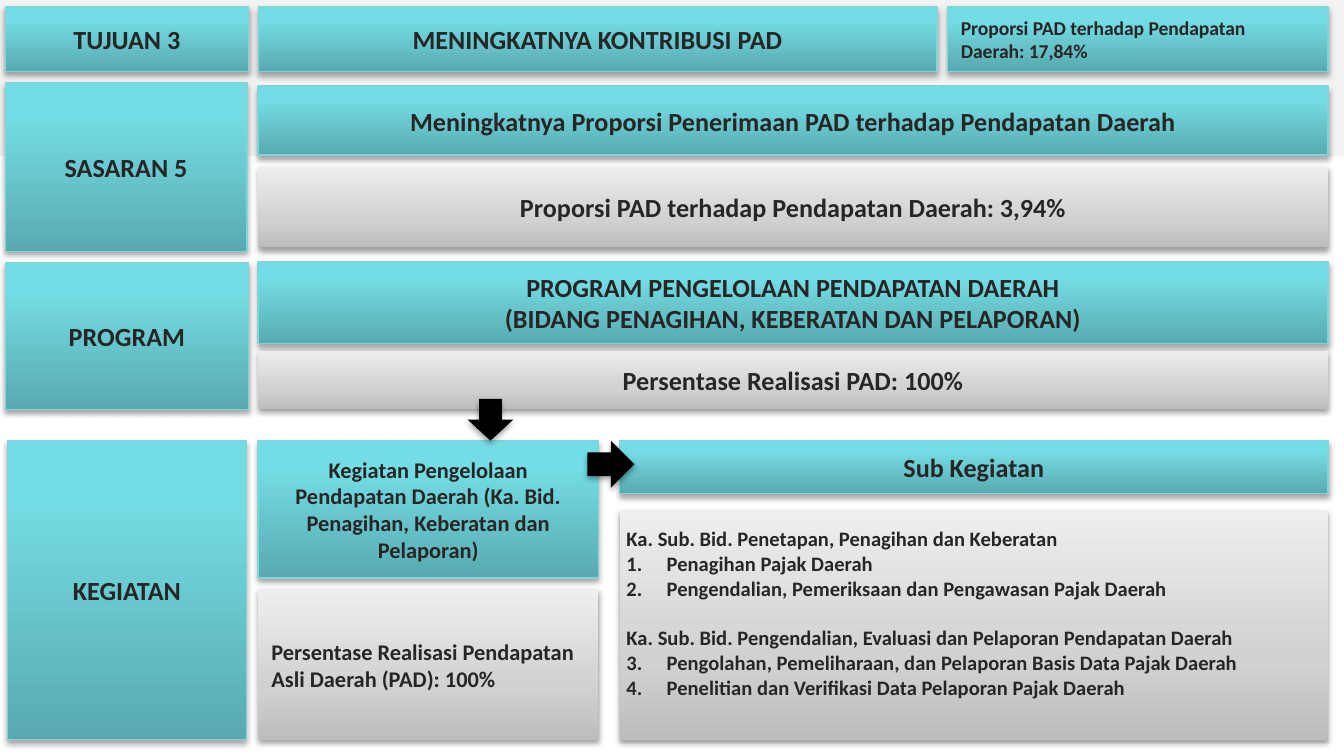
import copy

import pptx
import pptx.dml.color
import pptx.enum.shapes
import pptx.enum.text
import pptx.oxml.ns
import pptx.oxml.xmlchemy
import pptx.util
from lxml import etree

Cm = pptx.util.Cm
Pt = pptx.util.Pt
qn = pptx.oxml.ns.qn
SHAPE = pptx.enum.shapes.MSO_SHAPE
ALIGN = pptx.enum.text.PP_ALIGN

COLORS = {"text": "262626", "band": "F2F2F2", "edge": "80D5DB",
          "arrow": "000000", "shadow": "000000"}
GRADIENTS = {
    "teal": [(0, "59AAB0"), (0.8, "74DCE4"), (1, "72DFE7")],
    "gray": [(0, "BDBDBD"), (0.35, "D1D1D1"), (1, "EEEEEE")],
}
SHADOWS = {"teal": (35, 1.8), "gray": (38, 1.6)}
FRAME = {"word_wrap": True,
         "auto_size": pptx.enum.text.MSO_AUTO_SIZE.NONE,
         "vertical_anchor": pptx.enum.text.MSO_ANCHOR.MIDDLE}
LIST_MARGINS = {"margin_left": Cm(0.13), "margin_right": Cm(0.13),
                "margin_top": Cm(0.13), "margin_bottom": Cm(0.6)}
SPACING = {"space_before": Pt(0), "space_after": Pt(0), "line_spacing": 1.0}

RIGHT = 25.1
LABEL_X, MAIN_X, SUB_X = 0.1, 4.88, 11.71
MAIN_W, SUB_W, ACTIVITY_W = RIGHT - MAIN_X, RIGHT - SUB_X, 6.43
GOAL_Y, GOAL_H = 0.13, 1.22
ACTIVITY_Y = 8.33

BOXES = [
    ("teal", 17.91, GOAL_Y, RIGHT - 17.91, GOAL_H, 10.5, ALIGN.LEFT,
     ["Proporsi PAD terhadap Pendapatan", "Daerah: 17,84%"]),
    ("teal", LABEL_X, GOAL_Y, 4.6, GOAL_H, 14, ALIGN.CENTER, ["TUJUAN 3"]),
    ("teal", LABEL_X, 1.57, 4.57, 3.18, 14, ALIGN.CENTER, ["SASARAN 5"]),
    ("teal", MAIN_X, 1.63, MAIN_W, 1.3, 14, ALIGN.CENTER,
     ["Meningkatnya Proporsi Penerimaan PAD terhadap Pendapatan Daerah"]),
    ("gray", MAIN_X, 3.15, MAIN_W, 1.53, 14, ALIGN.CENTER,
     ["Proporsi PAD terhadap Pendapatan Daerah: 3,94%"]),
    ("teal", LABEL_X, 4.97, 4.6, 2.77, 14, ALIGN.CENTER, ["PROGRAM"]),
    ("teal", MAIN_X, 4.95, MAIN_W, 1.55, 14, ALIGN.CENTER,
     ["PROGRAM PENGELOLAAN PENDAPATAN DAERAH",
      "(BIDANG PENAGIHAN, KEBERATAN DAN PELAPORAN)"]),
    ("gray", MAIN_X, 6.63, MAIN_W, 1.1, 14, ALIGN.CENTER,
     ["Persentase Realisasi PAD: 100%"]),
    ("teal", 0.14, ACTIVITY_Y, 4.52, 5.65, 14, ALIGN.CENTER, ["KEGIATAN"]),
    ("teal", MAIN_X, ACTIVITY_Y, ACTIVITY_W, 2.6, 12, ALIGN.CENTER,
     ["Kegiatan Pengelolaan", "Pendapatan Daerah (Ka. Bid.",
      "Penagihan, Keberatan dan", "Pelaporan)"]),
    ("gray", MAIN_X, 11.15, ACTIVITY_W, 2.84, 12, ALIGN.LEFT,
     ["Persentase Realisasi Pendapatan Asli Daerah (PAD): 100%"]),
    ("teal", SUB_X, ACTIVITY_Y, SUB_W, 1, 14, ALIGN.CENTER, ["Sub Kegiatan"]),
]
SUB_ACTIVITIES = [
    ("Ka. Sub. Bid. Penetapan, Penagihan dan Keberatan",
     ["Penagihan Pajak Daerah",
      "Pengendalian, Pemeriksaan dan Pengawasan Pajak Daerah"]),
    ("Ka. Sub. Bid. Pengendalian, Evaluasi dan Pelaporan Pendapatan Daerah",
     ["Pengolahan, Pemeliharaan, dan Pelaporan Basis Data Pajak Daerah",
      "Penelitian dan Verifikasi Data Pelaporan Pajak Daerah"]),
]


def rgb(value):
    return pptx.dml.color.RGBColor.from_string(value)


def apply(target, values):
    for name, value in values.items():
        setattr(target, name, value)


def place(s, x, y, w, h):
    apply(s, {"left": Cm(x), "top": Cm(y), "width": Cm(w), "height": Cm(h)})


def add_shadow(s, style):
    alpha, distance = SHADOWS[style]
    s.shadow.inherit = False
    effects = s._element.spPr.find(qn("a:effectLst"))
    outer = etree.SubElement(effects, qn("a:outerShdw"), blurRad=str(Pt(3.1)),
                             dist=str(Pt(distance)), dir="5400000", rotWithShape="0")
    color = etree.SubElement(outer, qn("a:srgbClr"), val=COLORS["shadow"])
    etree.SubElement(color, qn("a:alpha"), val=str(alpha * 1000))


def paint(s, style):
    s.fill.gradient()
    s.fill.gradient_angle = 90
    stops = s._element.spPr.find(".//" + qn("a:gsLst"))
    stops.append(copy.deepcopy(stops[0]))
    for stop, (position, color) in zip(s.fill.gradient_stops, GRADIENTS[style]):
        stop.position = position
        stop.color.rgb = rgb(color)
    if style == "teal":
        s.line.color.rgb = rgb(COLORS["edge"])
        s.line.width = Pt(0.75)
    else:
        s.line.fill.background()
    add_shadow(s, style)


def add_line(tf, index, text, size, align):
    p = tf.paragraphs[0] if index == 0 else tf.add_paragraph()
    apply(p, {"alignment": align, **SPACING})
    r = p.add_run()
    r.text = text
    apply(r.font, {"name": "Calibri", "size": Pt(size), "bold": True})
    r.font.color.rgb = rgb(COLORS["text"])
    return p


def fill_box(s, style, x, y, w, h, size, align, lines):
    place(s, x, y, w, h)
    paint(s, style)
    apply(s.text_frame, FRAME)
    for index, text in enumerate(lines):
        add_line(s.text_frame, index, text, size, align)


def set_bullet(p, number=None):
    pPr = p._p.get_or_add_pPr()
    indent = Cm(0.76) if number else 0
    pPr.set("marL", str(indent))
    pPr.set("indent", str(-indent))
    if number:
        etree.SubElement(pPr, qn("a:buFont"), typeface="+mj-lt")
        etree.SubElement(pPr, qn("a:buAutoNum"), type="arabicPeriod", startAt=str(number))
    else:
        etree.SubElement(pPr, qn("a:buNone"))


def fill_list(s):
    fill_box(s, "gray", SUB_X, 9.65, SUB_W, 4.34, 11, ALIGN.LEFT, [])
    tf = s.text_frame
    apply(tf, LIST_MARGINS)
    index, start = 0, 1
    for heading, items in SUB_ACTIVITIES:
        p = add_line(tf, index, heading, 11, ALIGN.LEFT)
        if index:
            p.space_before = Pt(13.4)
        set_bullet(p)
        for offset, item in enumerate(items, 1):
            set_bullet(add_line(tf, index + offset, item, 11, ALIGN.LEFT), start)
        index += len(items) + 1
        start += len(items)


def add_plain(slide, kind, x, y, w, h, color):
    s = slide.shapes.add_shape(kind, Cm(x), Cm(y), Cm(w), Cm(h))
    s.fill.solid()
    s.fill.fore_color.rgb = rgb(COLORS[color])
    s.line.fill.background()
    s.shadow.inherit = False
    return s


def add_arrow(slide, x, y, w, h, rotation=0):
    s = add_plain(slide, SHAPE.DOWN_ARROW, x, y, w, h, "arrow")
    s.rotation = rotation
    add_shadow(s, "teal")


def main():
    prs = pptx.Presentation()
    prs.slide_width, prs.slide_height = Cm(25.4), Cm(14.29)
    slide = prs.slides.add_slide(prs.slide_layouts[1])
    band = add_plain(slide, SHAPE.RECTANGLE, 0, 0, 25.4, 2.95, "band")
    slide.shapes._spTree.insert(2, band._element)
    fill_box(slide.shapes.title, "teal", MAIN_X, GOAL_Y, 12.83, GOAL_H, 14,
             ALIGN.CENTER, ["MENINGKATNYA KONTRIBUSI PAD"])
    fill_list(slide.placeholders[1])
    for box in BOXES:
        s = slide.shapes.add_shape(SHAPE.RECTANGLE, 0, 0, 0, 0)
        fill_box(s, *box)
    add_arrow(slide, 11.1, ACTIVITY_Y, 0.89, 0.89, 270)
    add_arrow(slide, 8.84, 7.54, 0.86, 0.79)
    prs.save("out.pptx")


if __name__ == "__main__":
    main()
